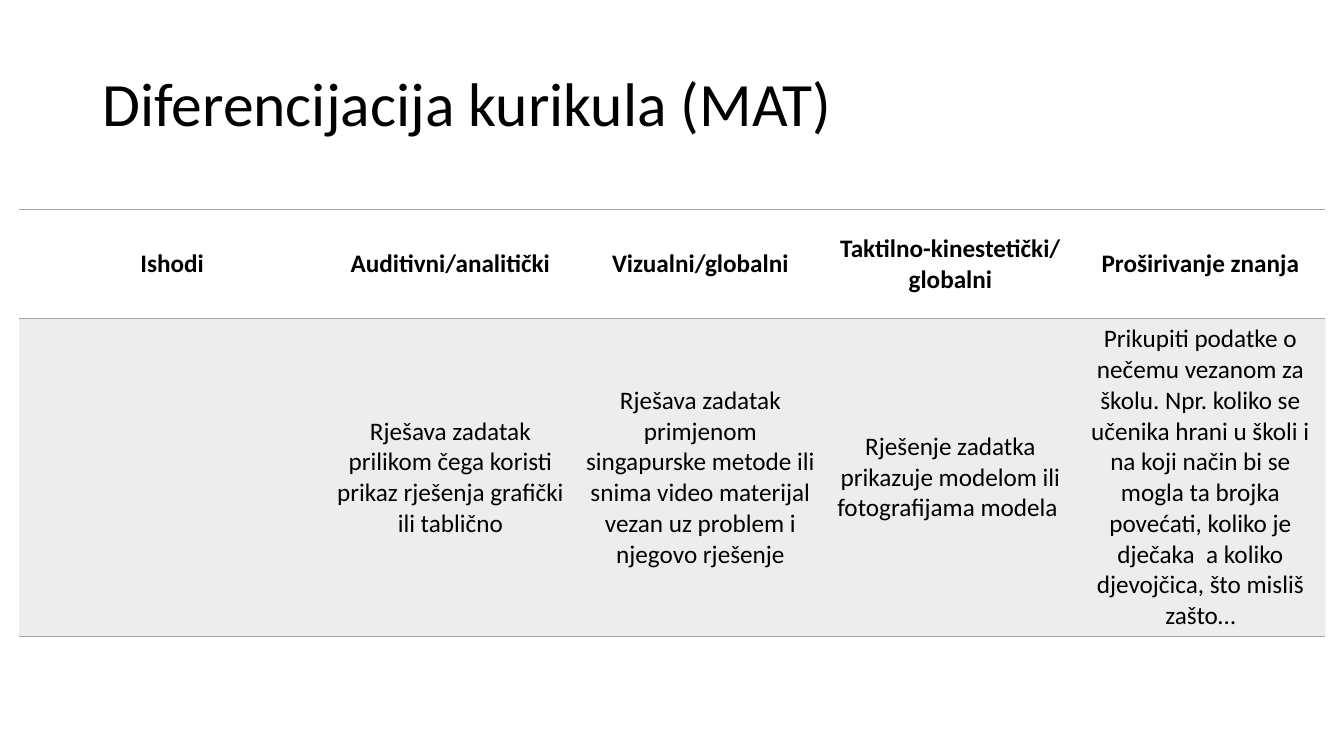
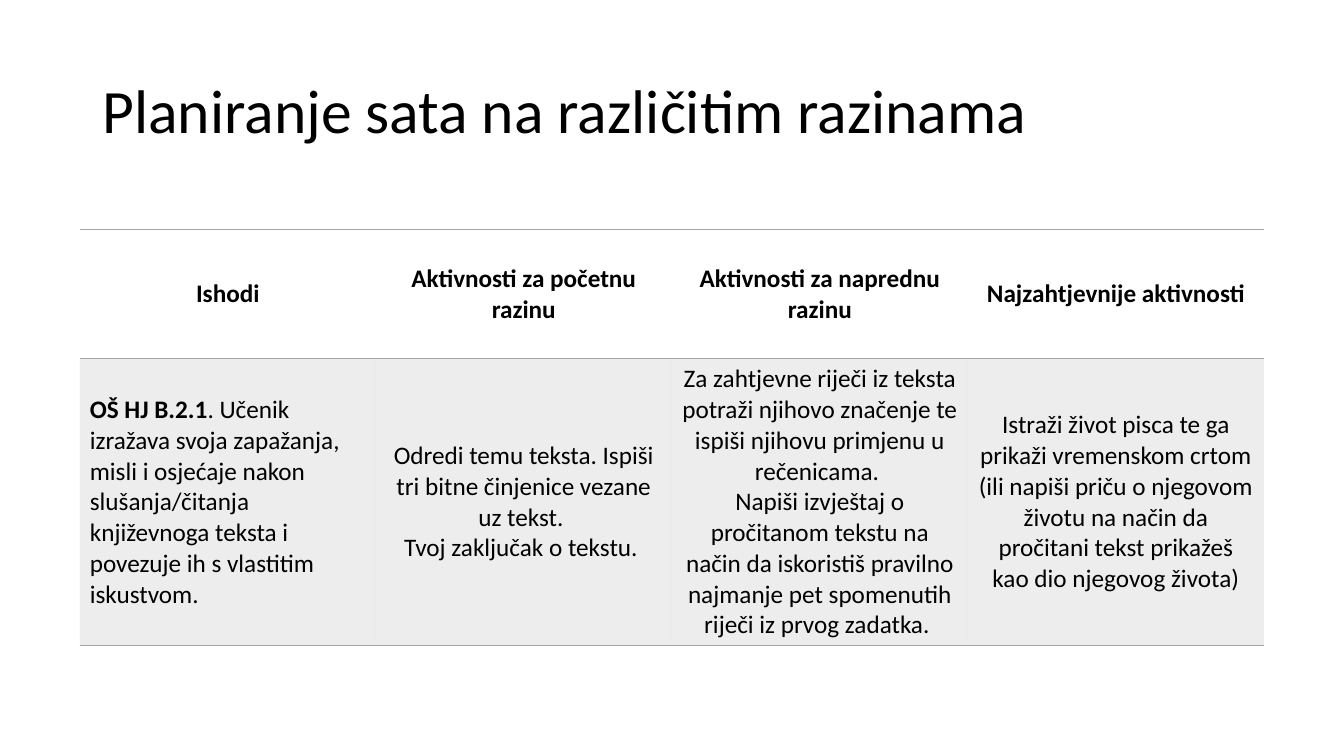
"""Build two Croatian lesson-planning slides, each with a title and a table."""
from lxml.etree import SubElement
from pptx import Presentation
from pptx.dml.color import RGBColor
from pptx.enum.text import MSO_ANCHOR, PP_ALIGN
from pptx.oxml.ns import qn
from pptx.util import Cm, Pt

FONT = "Calibri"
BLACK = RGBColor(0x00, 0x00, 0x00)
GRAY = RGBColor(0xA5, 0xA5, 0xA5)
BODY_OPACITY = 20
PLAIN_TABLE_STYLE = "{2D5ABB26-0587-4C30-8999-92F81FD0307C}"

SLIDES = [
    {
        "title": "Diferencijacija kurikula (MAT)",
        "title_top": 0.84,
        "table_at": (0.48, 5.28),
        "widths": [7.72] + [6.3] * 4,
        "heights": [2.75, 7.87],
        "rows": [
            ["Ishodi", "Auditivni/analitički", "Vizualni/globalni",
             "Taktilno-kinestetički/\nglobalni", "Proširivanje znanja"],
            ["",
             "Rješava zadatak prilikom čega koristi prikaz rješenja grafički ili tablično",
             "Rješava zadatak primjenom singapurske metode ili snima video materijal "
             "vezan uz problem i njegovo rješenje",
             "Rješenje zadatka prikazuje modelom ili fotografijama modela ",
             "Prikupiti podatke o nečemu vezanom za školu. Npr. koliko se učenika hrani "
             "u školi i na koji način bi se mogla ta brojka povećati, koliko je "
             "dječaka  a koliko djevojčica, što misliš zašto…"],
        ],
    },
    {
        "title": "Planiranje sata na različitim razinama",
        "title_top": 1.02,
        "table_at": (2.01, 5.79),
        "widths": [7.46] * 4,
        "heights": [3.25, 7.11],
        "outcome_code": "OŠ HJ B.2.1",
        "rows": [
            ["Ishodi", "Aktivnosti za početnu razinu", "Aktivnosti za naprednu razinu",
             "Najzahtjevnije aktivnosti"],
            [". Učenik izražava svoja zapažanja, misli i osjećaje nakon slušanja/čitanja "
             "književnoga teksta i povezuje ih s vlastitim iskustvom.",
             "Odredi temu teksta. Ispiši tri bitne činjenice vezane uz tekst. \n"
             "Tvoj zaključak o tekstu. ",
             "Za zahtjevne riječi iz teksta potraži njihovo značenje te ispiši njihovu "
             "primjenu u rečenicama. \n"
             "Napiši izvještaj o pročitanom tekstu na način da iskoristiš pravilno "
             "najmanje pet spomenutih riječi iz prvog zadatka. ",
             "Istraži život pisca te ga prikaži vremenskom crtom (ili napiši priču o "
             "njegovom životu na način da pročitani tekst prikažeš kao dio njegovog života)"],
        ],
    },
]


def set_font(paragraph, size, bold=False):
    paragraph.font.name = FONT
    paragraph.font.size = Pt(size)
    paragraph.font.bold = bold
    paragraph.font.color.rgb = BLACK


def add_border(cell, side):
    line = SubElement(cell._tc.get_or_add_tcPr(), qn(f"a:ln{side}"), w=str(Pt(1)))
    fill = SubElement(line, qn("a:solidFill"))
    SubElement(fill, qn("a:srgbClr"), val=str(GRAY))


presentation = Presentation()
presentation.slide_width = Cm(33.87)
presentation.slide_height = Cm(19.05)
title_only = presentation.slide_layouts[5]

for content in SLIDES:
    slide = presentation.slides.add_slide(title_only)

    title = slide.shapes.title
    title.left, title.top = Cm(2.33), Cm(content["title_top"])
    title.width, title.height = Cm(29.21), Cm(3.68)
    title.text_frame.text = content["title"]
    title.text_frame.vertical_anchor = MSO_ANCHOR.MIDDLE
    paragraph = title.text_frame.paragraphs[0]
    paragraph.alignment = PP_ALIGN.LEFT
    paragraph.line_spacing = 0.9
    set_font(paragraph, 44)

    rows, widths, heights = content["rows"], content["widths"], content["heights"]
    left, top = content["table_at"]
    table = slide.shapes.add_table(
        len(rows), len(widths), Cm(left), Cm(top), Cm(sum(widths)), Cm(sum(heights))
    ).table
    table._tbl.tblPr.find(qn("a:tableStyleId")).text = PLAIN_TABLE_STYLE
    table.horz_banding = False
    for column, width in zip(table.columns, widths):
        column.width = Cm(width)

    for row_index, (row, height) in enumerate(zip(rows, heights)):
        is_header = row_index == 0
        table.rows[row_index].height = Cm(height)
        for column_index, text in enumerate(row):
            cell = table.cell(row_index, column_index)
            cell.text = text
            cell.vertical_anchor = MSO_ANCHOR.MIDDLE
            for paragraph in cell.text_frame.paragraphs:
                paragraph.alignment = PP_ALIGN.CENTER
                set_font(paragraph, 18, bold=is_header)
            add_border(cell, "T")
            add_border(cell, "B")
            if is_header:
                cell.fill.background()
            else:
                cell.fill.solid()
                cell.fill.fore_color.rgb = GRAY
                color = cell._tc.tcPr.find(f"{qn('a:solidFill')}/{qn('a:srgbClr')}")
                SubElement(color, qn("a:alpha"), val=str(BODY_OPACITY * 1000))

    if "outcome_code" in content:
        paragraph = table.cell(1, 0).text_frame.paragraphs[0]
        paragraph.alignment = PP_ALIGN.LEFT
        description = paragraph.runs[0].text
        paragraph.runs[0].text = content["outcome_code"]
        paragraph.runs[0].font.bold = True
        paragraph.add_run().text = description

presentation.save("out.pptx")
